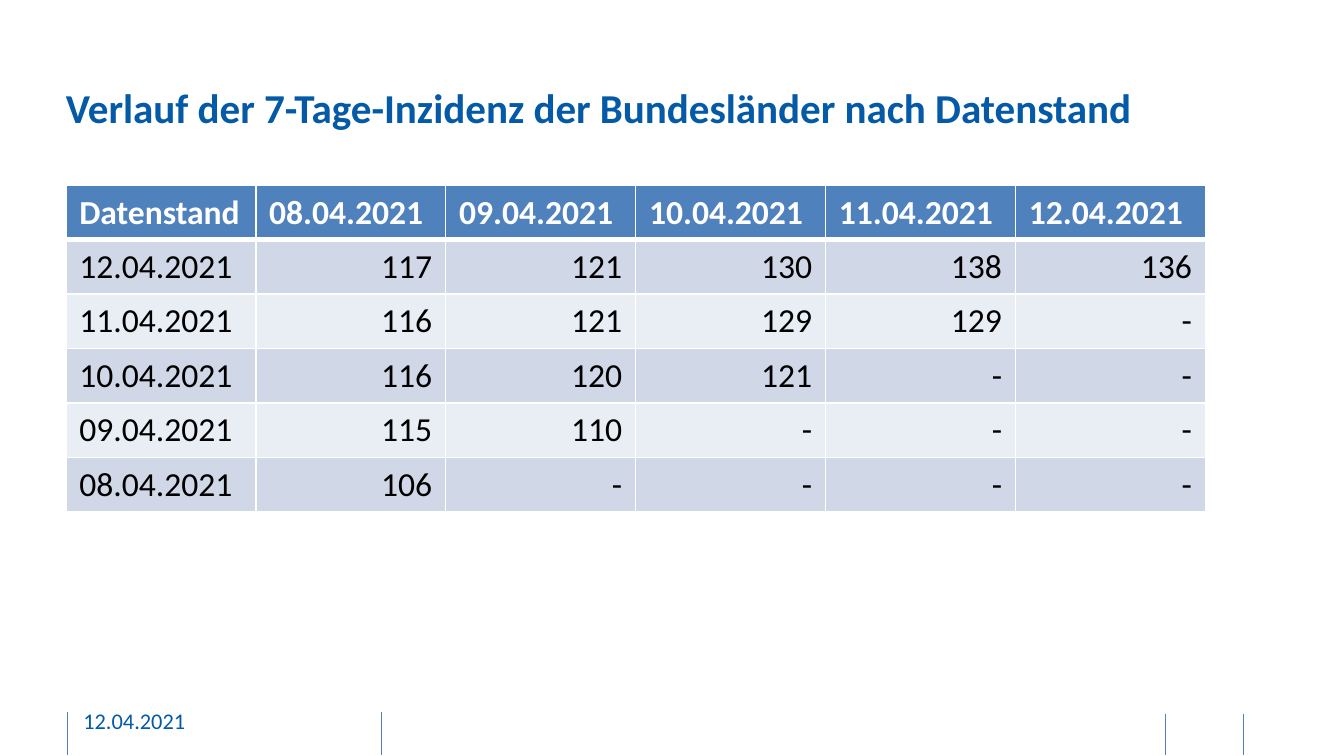
from dataclasses import dataclass

from lxml.etree import SubElement
from pptx import Presentation
from pptx.dml.color import RGBColor
from pptx.enum.shapes import MSO_CONNECTOR
from pptx.enum.text import MSO_ANCHOR, PP_ALIGN
from pptx.oxml import parse_xml
from pptx.oxml.ns import nsdecls, qn
from pptx.util import Inches, Pt


@dataclass(frozen=True)
class Theme:
    font: str = "Calibri"
    heading: str = "045AA6"
    accent: str = "4F81BD"
    band_dark: str = "D0D8E8"
    band_light: str = "E9EDF4"
    white: str = "FFFFFF"
    black: str = "000000"
    title_size: int = 22
    table_size: int = 18
    footer_size: int = 12
    rule_width: float = 0.5
    grid_width: int = 1
    header_rule_width: int = 3


THEME = Theme()
HEADER = ["Datenstand", "08.04.2021", "09.04.2021", "10.04.2021", "11.04.2021", "12.04.2021"]
INCIDENCES = {
    "12.04.2021": [117, 121, 130, 138, 136],
    "11.04.2021": [116, 121, 129, 129],
    "10.04.2021": [116, 120, 121],
    "09.04.2021": [115, 110],
    "08.04.2021": [106],
}


def add_run(paragraph, text, size, color, bold=False):
    run = paragraph.add_run()
    run.text = text
    run.font.name = THEME.font
    run.font.size = Pt(size)
    run.font.bold = bold
    run.font.color.rgb = RGBColor.from_string(color)


def add_label(slide, box, text, size, bold=False, inset=0):
    label = slide.shapes.add_textbox(*map(Inches, box)).text_frame
    label.word_wrap = True
    label.vertical_anchor = MSO_ANCHOR.MIDDLE
    label.margin_left = label.margin_right = 0
    label.margin_top = label.margin_bottom = Inches(inset)
    add_run(label.paragraphs[0], text, size, THEME.heading, bold)


def set_borders(cell, top, bottom):
    properties = cell._tc.get_or_add_tcPr()
    widths = {"lnL": THEME.grid_width, "lnR": THEME.grid_width, "lnT": top, "lnB": bottom}
    for position, (side, width) in enumerate(widths.items()):
        border = parse_xml(
            f'<a:{side} {nsdecls("a")} w="{Pt(width)}"><a:solidFill>'
            f'<a:srgbClr val="{THEME.white}"/></a:solidFill></a:{side}>'
        )
        properties.insert(position, border)


def add_incidence_table(slide, box):
    left, top, width, height = box
    rows = [HEADER]
    for date, values in INCIDENCES.items():
        missing = len(HEADER) - 1 - len(values)
        rows.append([date, *map(str, values), *["-"] * missing])
    table = slide.shapes.add_table(len(rows), len(HEADER), *map(Inches, box)).table
    for column in table.columns:
        column.width = Inches(width / len(HEADER))
    for row in table.rows:
        row.height = Inches(height / len(rows))

    for r, texts in enumerate(rows):
        is_header = r == 0
        band = THEME.band_dark if r % 2 else THEME.band_light
        for c, text in enumerate(texts):
            cell = table.cell(r, c)
            cell.fill.solid()
            cell.fill.fore_color.rgb = RGBColor.from_string(THEME.accent if is_header else band)
            set_borders(
                cell,
                THEME.header_rule_width if r == 1 else THEME.grid_width,
                THEME.header_rule_width if is_header else THEME.grid_width,
            )
            paragraph = cell.text_frame.paragraphs[0]
            if not is_header and c > 0:
                paragraph.alignment = PP_ALIGN.RIGHT
                if text != "-":
                    cell.vertical_anchor = MSO_ANCHOR.BOTTOM
            color = THEME.white if is_header else THEME.black
            add_run(paragraph, text, THEME.table_size, color, is_header)


def add_footer(slide, box):
    left, top, width, height = box
    for offset, drop in ((0, 0.09), (2.34, 0.09), (8.17, 0.1), (width, 0.1)):
        x = Inches(left + offset)
        divider = slide.shapes.add_connector(
            MSO_CONNECTOR.STRAIGHT, x, Inches(top + drop), x, Inches(top + height)
        )
        divider.line.color.rgb = RGBColor.from_string(THEME.accent)
        divider.line.width = Pt(THEME.rule_width)
        SubElement(divider._element.spPr, qn("a:effectLst"))
    add_label(slide, (left + 0.12, top, 2.03, 0.3), "12.04.2021", THEME.footer_size, inset=0.05)


def main():
    presentation = Presentation()
    presentation.slide_width = Inches(10)
    presentation.slide_height = Inches(10 * 9 / 16)
    slide = presentation.slides.add_slide(presentation.slide_layouts[6])
    add_footer(slide, (0.5, 5.21, 8.75, 0.41))
    add_label(
        slide,
        (0.49, 0.41, 8.73, 0.78),
        "Verlauf der 7-Tage-Inzidenz der Bundesländer nach Datenstand",
        THEME.title_size,
        bold=True,
    )
    add_incidence_table(slide, (0.49, 1.38, 8.48, 2.43))
    presentation.save("out.pptx")


if __name__ == "__main__":
    main()
